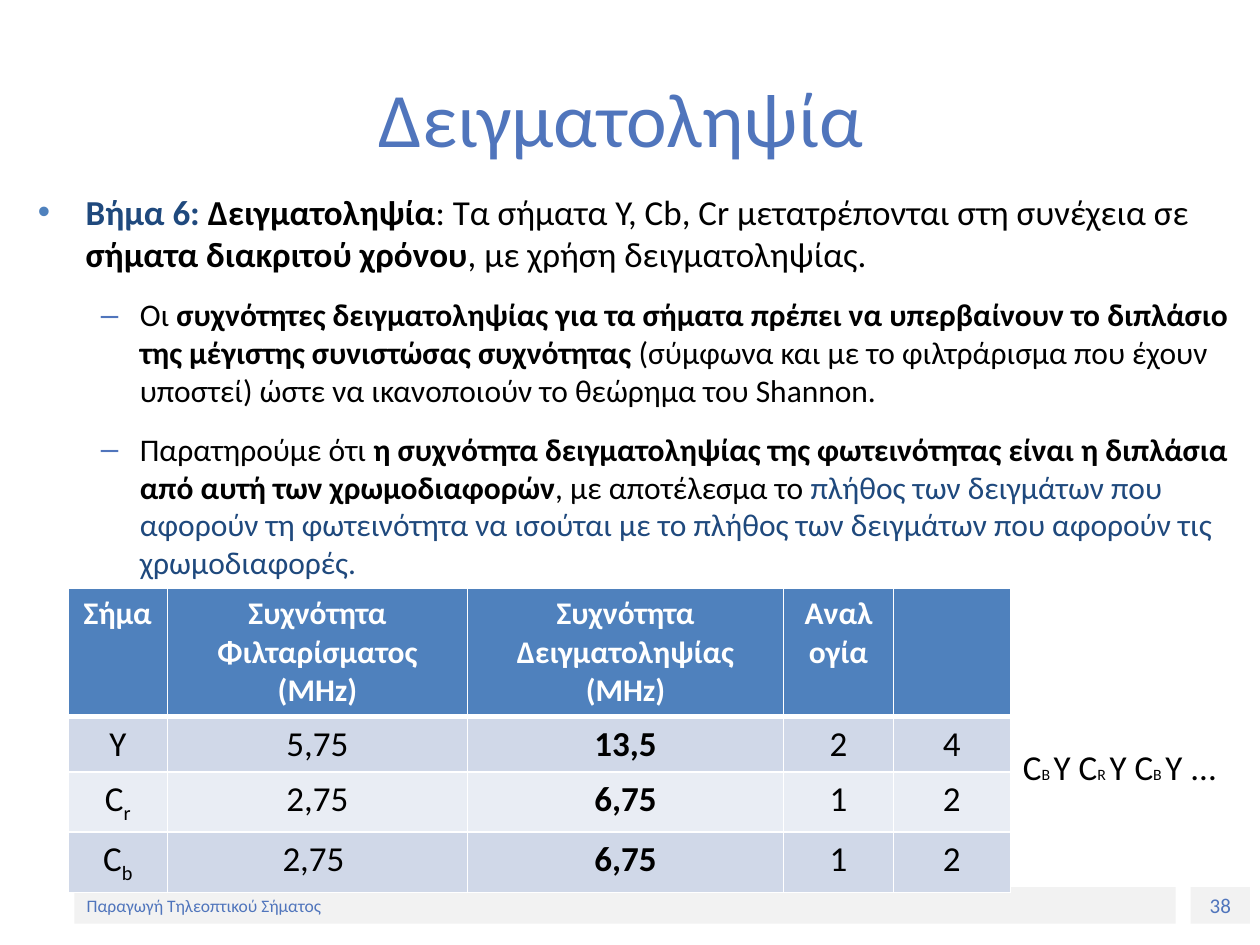
from dataclasses import dataclass

from lxml import etree
from pptx import Presentation
from pptx.dml.color import RGBColor
from pptx.enum.shapes import MSO_SHAPE
from pptx.enum.text import MSO_ANCHOR, MSO_AUTO_SIZE, PP_ALIGN
from pptx.oxml.ns import qn
from pptx.util import Inches, Pt

RECTANGLE = MSO_SHAPE.RECTANGLE
MIDDLE, TOP = MSO_ANCHOR.MIDDLE, MSO_ANCHOR.TOP
CENTER, LEFT = PP_ALIGN.CENTER, PP_ALIGN.LEFT
NO_AUTOFIT = MSO_AUTO_SIZE.NONE


@dataclass(frozen=True)
class Theme:
    font: str = "Calibri"
    accent: str = "5075BC"
    emphasis: str = "1F497D"
    header: str = "4F81BD"
    bands: tuple = ("D0D8E8", "E9EDF4")
    bar: str = "F2F2F2"
    black: str = "000000"
    white: str = "FFFFFF"
    title_size: int = 44
    large: int = 20
    medium: int = 18
    page: int = 12
    footer: int = 10
    index: int = 9


THEME = Theme()
BOLD = {"bold": True}
BLUE = {"color": THEME.emphasis}
SUBSCRIPT = {"baseline": -25}
INDEX = {"size": THEME.index}

TITLE = "Δειγματοληψία "
# Each paragraph: level, then runs that are plain strings or (text, format).
STEP = [
    (0, [("Βήμα 6: ", BOLD | BLUE), ("Δειγματοληψία", BOLD),
         ": Τα σήματα Y, Cb, Cr μετατρέπονται στη συνέχεια σε ",
         ("σήματα διακριτού χρόνου", BOLD), ", με χρήση δειγματοληψίας."]),
    (1, ["Οι ",
         ("συχνότητες δειγματοληψίας για τα σήματα πρέπει να υπερβαίνουν το "
          "διπλάσιο της μέγιστης συνιστώσας συχνότητας ", BOLD),
         "(σύμφωνα και με το φιλτράρισμα που έχουν υποστεί) ώστε να "
         "ικανοποιούν το θεώρημα του Shannon."]),
    (1, ["Παρατηρούμε ότι ",
         ("η συχνότητα δειγματοληψίας της φωτεινότητας είναι η διπλάσια από "
          "αυτή των χρωμοδιαφορών", BOLD),
         ", με αποτέλεσμα το ",
         ("πλήθος των δειγμάτων που αφορούν τη φωτεινότητα να ισούται με το "
          "πλήθος των δειγμάτων που αφορούν τις χρωμοδιαφορές.", BLUE)]),
]
# Per level: type size, left indent, hanging indent, bullet, bullet colour
LEVELS = [
    (THEME.large, 0.38, 0.38, "•", THEME.header),
    (THEME.medium, 0.81, 0.31, "–", THEME.accent),
]
FREQUENCIES = [
    ["Σήμα", "Συχνότητα Φιλταρίσματος (MHz)",
     "Συχνότητα Δειγματοληψίας (MHz)", "Aναλογία", ""],
    ["Υ", "5,75", "13,5", "2", "4"],
    [["C", ("r", SUBSCRIPT)], "2,75", "6,75", "1", "2"],
    [["C", ("b", SUBSCRIPT)], "2,75 ", "6,75", "1", "2"],
]
COLUMN_WIDTHS = [0.79, 2.38, 2.51, 0.87, 0.93]
ROW_HEIGHTS = [0.59, 0.36, 0.36, 0.36]
SAMPLING_COLUMN = 2
SEQUENCE = ["C", ("B ", INDEX), "Y C", ("R ", INDEX), "Y C", ("B ", INDEX), "Y ..."]
FOOTERS = [
    ("38", (9.45, 7.04, 0.47, 0.29), THEME.page, CENTER),
    ("Παραγωγή Τηλεοπτικού Σήματος", (0.59, 7.04, 8.74, 0.29), THEME.footer, LEFT),
]


def write(paragraph, content, align=LEFT, **base):
    """Fill a paragraph with one string or a list of runs over a base format."""
    paragraph.alignment = align
    for part in [content] if isinstance(content, str) else content:
        text, own = (part, {}) if isinstance(part, str) else part
        style = base | own
        run = paragraph.add_run()
        run.text = text
        run.font.name = THEME.font
        run.font.size = Pt(style["size"])
        run.font.bold = style.get("bold", False)
        run.font.color.rgb = RGBColor.from_string(style.get("color", THEME.black))
        if "baseline" in style:
            run.font._element.set("baseline", str(style["baseline"] * 1000))


def place(shape, box):
    shape.left, shape.top, shape.width, shape.height = map(Inches, box)


def set_bullet(paragraph, left, hanging, char, color):
    props = paragraph._p.get_or_add_pPr()
    props.set("marL", str(Inches(left)))
    props.set("indent", str(-Inches(hanging)))
    bullet_color = etree.SubElement(props, qn("a:buClr"))
    etree.SubElement(bullet_color, qn("a:srgbClr")).set("val", color)
    etree.SubElement(props, qn("a:buFont")).set("typeface", "Arial")
    etree.SubElement(props, qn("a:buChar")).set("char", char)


def set_borders(cell, **widths):
    """Draw white borders; widths are points by side, in the order L, R, T, B."""
    props = cell._tc.get_or_add_tcPr()
    for position, (side, width) in enumerate(widths.items()):
        line = etree.Element(qn(f"a:ln{side}"), w=str(Pt(width)))
        fill = etree.SubElement(line, qn("a:solidFill"))
        etree.SubElement(fill, qn("a:srgbClr")).set("val", THEME.white)
        props.insert(position, line)


def add_footer(slide, text, box, size, align):
    bar = slide.shapes.add_shape(RECTANGLE, *map(Inches, box))
    bar.shadow.inherit = False
    bar.fill.solid()
    bar.fill.fore_color.rgb = RGBColor.from_string(THEME.bar)
    bar.line.fill.background()
    bar.text_frame.vertical_anchor = MIDDLE
    write(bar.text_frame.paragraphs[0], text, align, size=size, color=THEME.accent)


def add_title(slide):
    title = slide.shapes.title
    place(title, (0.5, 0.3, 9, 1.25))
    title.text_frame.vertical_anchor = MIDDLE
    write(title.text_frame.paragraphs[0], TITLE, CENTER,
          size=THEME.title_size, color=THEME.accent)


def add_step(slide):
    body = slide.placeholders[1]
    place(body, (0.2, 1.46, 9.8, 3.23))
    frame = body.text_frame
    frame.auto_size = NO_AUTOFIT
    frame.vertical_anchor = TOP
    for number, (level, runs) in enumerate(STEP):
        paragraph = frame.add_paragraph() if number else frame.paragraphs[0]
        size, *bullet = LEVELS[level]
        paragraph.level = level
        paragraph.space_before = Pt(6 if number else 0)
        paragraph.space_after = Pt(6)
        set_bullet(paragraph, *bullet)
        write(paragraph, runs, size=size)


def add_frequencies(slide):
    table = slide.shapes.add_table(
        len(ROW_HEIGHTS), len(COLUMN_WIDTHS), Inches(0.54), Inches(4.67),
        Inches(sum(COLUMN_WIDTHS)), Inches(sum(ROW_HEIGHTS))).table
    for column, width in zip(table.columns, COLUMN_WIDTHS):
        column.width = Inches(width)
    for row, height in zip(table.rows, ROW_HEIGHTS):
        row.height = Inches(height)
    for r, values in enumerate(FREQUENCIES):
        heading = r == 0
        fill = THEME.header if heading else THEME.bands[(r - 1) % 2]
        for c, content in enumerate(values):
            cell = table.cell(r, c)
            cell.fill.solid()
            cell.fill.fore_color.rgb = RGBColor.from_string(fill)
            set_borders(cell, L=1, R=1, T=3 if r == 1 else 1, B=3 if heading else 1)
            if content:
                write(cell.text_frame.paragraphs[0], content, CENTER,
                      size=THEME.medium if heading else THEME.large,
                      bold=heading or c == SAMPLING_COLUMN,
                      color=THEME.white if heading else THEME.black)


def add_sequence(slide):
    sequence = slide.shapes.add_textbox(*map(Inches, (8.02, 5.87, 1.98, 0.44)))
    sequence.text_frame.word_wrap = True
    write(sequence.text_frame.paragraphs[0], SEQUENCE, size=THEME.large)


def main():
    deck = Presentation()
    deck.slide_width, deck.slide_height = Inches(10), Inches(7.5)
    slide = deck.slides.add_slide(deck.slide_layouts[1])
    for footer in FOOTERS:
        add_footer(slide, *footer)
    add_title(slide)
    add_step(slide)
    add_frequencies(slide)
    add_sequence(slide)
    deck.save("out.pptx")


if __name__ == "__main__":
    main()
